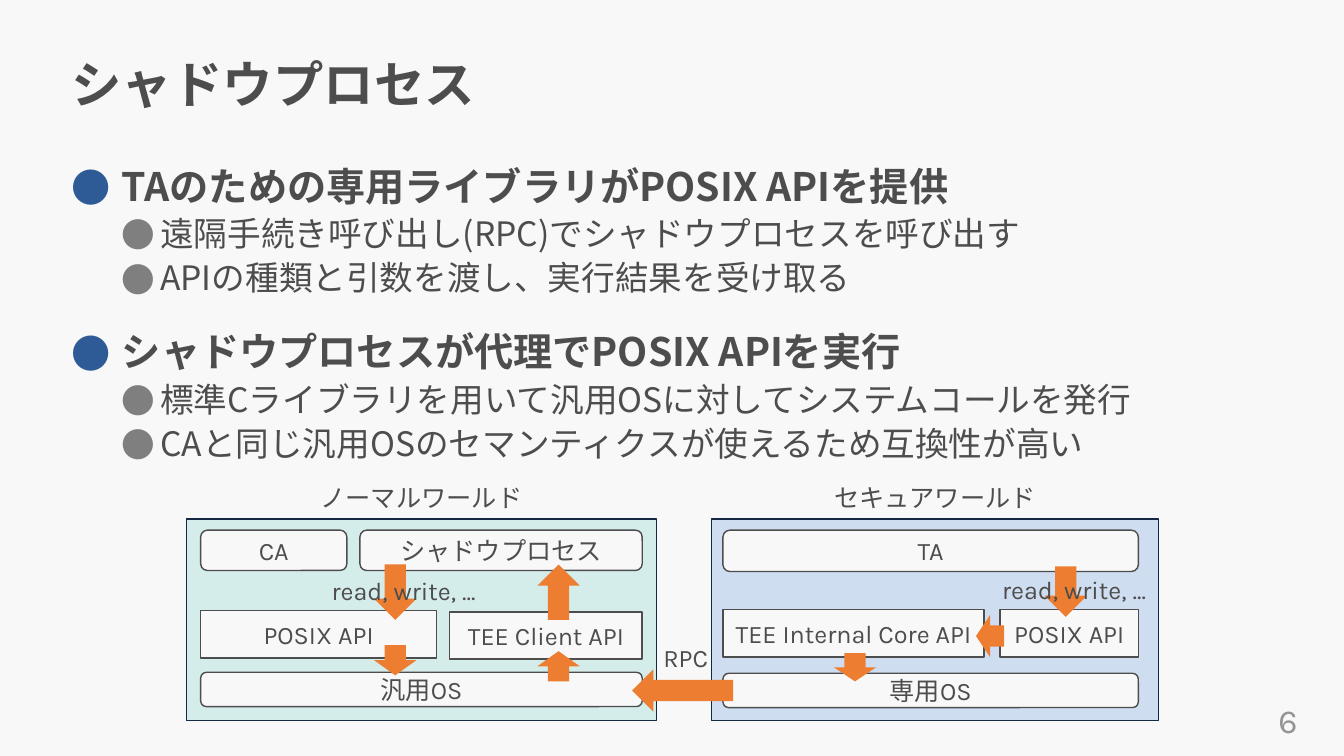
import pptx
import pptx.util
import pptx.dml.color
import pptx.enum.shapes
import pptx.enum.text
import pptx.oxml
import pptx.oxml.ns

PX = 9144
KIND = pptx.enum.shapes.MSO_SHAPE
ALIGN = pptx.enum.text.PP_ALIGN
ANCHOR = pptx.enum.text.MSO_ANCHOR
FIT = pptx.enum.text.MSO_AUTO_SIZE
SANS, KARLA = "Noto Sans CJK JP", "Karla"
HEX = {
    "back": "F8F8F8", "text": "4D4D4D", "page": "949494", "edge": "142842",
    "green": "D5EDEA", "blue": "CFDDF0", "arrow": "ED7D31",
    "main": "2E5B96", "sub": "7F7F7F",
}
POINTS = [
    (0, "TAのための専用ライブラリがPOSIX APIを提供"),
    (1, "遠隔手続き呼び出し(RPC)でシャドウプロセスを呼び出す"),
    (1, "APIの種類と引数を渡し、実行結果を受け取る"),
    (0, "シャドウプロセスが代理でPOSIX APIを実行"),
    (1, "標準Cライブラリを用いて汎用OSに対してシステムコールを発行"),
    (1, "CAと同じ汎用OSのセマンティクスが使えるため互換性が高い"),
]
NORMAL = {
    "name": "ノーマルワールド", "fill": "green",
    "round": [("CA", (14, 11, 145, 40)), ("シャドウプロセス", (172, 11, 280, 40)),
              ("汎用OS", (14, 152, 438, 34))],
    "rect": [("POSIX API", (14, 91, 234, 47)), ("TEE Client API", (261, 92, 191, 47))],
    "arrows": [((348, 131, 42, 30), 180), ((348, 45, 42, 55), 180),
               ((186, 45, 42, 55), 0), ((186, 125, 42, 30), 0)],
    "call": (134, 51, 165, 40),
}
SECURE = {
    "name": "セキュアワールド", "fill": "blue",
    "round": [("TA", (11, 11, 412, 41)), ("専用OS", (11, 153, 412, 34))],
    "rect": [("TEE Internal Core API", (11, 90, 259, 47)), ("POSIX API", (286, 90, 137, 47))],
    "arrows": [((330, 47, 42, 50), 0), ((121, 133, 42, 28), 0), ((255, 102, 42, 28), 90)],
    "call": (278, 50, 165, 40),
}


def color(key):
    """Return the named colour."""
    return pptx.dml.color.RGBColor.from_string(HEX[key])


def scale(box):
    """Turn a box of px into EMU."""
    return [n * PX for n in box]


def shift(box, part):
    """Place a part relative to the corner of a box."""
    return (box[0] + part[0], box[1] + part[1], part[2], part[3])


def node(parent, tag, **attrs):
    """Append a drawing element with attributes."""
    child = pptx.oxml.parse_xml(f"<a:{tag} {pptx.oxml.ns.nsdecls('a')}/>")
    for key, value in attrs.items():
        child.set(key, value)
    parent.append(child)
    return child


def write(para, text, size=18, face=KARLA, key="text", bold=False):
    """Add one formatted run."""
    run = para.add_run()
    run.text = text
    run.font.size = pptx.util.Pt(size)
    run.font.bold = bold
    run.font.color.rgb = color(key)
    run.font.name = face
    node(run.font._element, "ea", typeface=SANS)


def label(slide, box, text, wrap=False, size=18, key="text"):
    """Add a text box, centred if it wraps."""
    frame = slide.shapes.add_textbox(*scale(box)).text_frame
    frame.word_wrap = wrap
    frame.auto_size = FIT.SHAPE_TO_FIT_TEXT
    para = frame.paragraphs[0]
    para.alignment = ALIGN.CENTER if wrap else ALIGN.LEFT
    write(para, text, size, key=key)


def block(slide, box, kind, fill, edge=None, text=None):
    """Add a filled shape with optional edge and text."""
    shape = slide.shapes.add_shape(kind, *scale(box))
    shape.shadow.inherit = False
    shape.fill.solid()
    shape.fill.fore_color.rgb = color(fill)
    if edge:
        shape.line.color.rgb = color(edge)
        shape.line.width = pptx.util.Pt(1)
    else:
        shape.line.fill.background()
    if text:
        frame = shape.text_frame
        frame.margin_left = frame.margin_right = 0
        frame.vertical_anchor = ANCHOR.MIDDLE
        frame.paragraphs[0].alignment = ALIGN.CENTER
        write(frame.paragraphs[0], text)
    return shape


def arrow(slide, box, turn):
    """Add a down arrow turned clockwise."""
    block(slide, box, KIND.DOWN_ARROW, "arrow").rotation = turn


def settle(holder, box, anchor):
    """Move a placeholder and return its text frame."""
    holder.left, holder.top, holder.width, holder.height = scale(box)
    frame = holder.text_frame
    frame.auto_size = FIT.NONE
    frame.word_wrap = True
    frame.vertical_anchor = anchor
    return frame


def head(slide, box, text):
    """Fill the title."""
    para = settle(slide.shapes.title, box, ANCHOR.MIDDLE).paragraphs[0]
    para.alignment = ALIGN.LEFT
    para.line_spacing = 0.9
    write(para, text, 36, SANS, bold=True)


def body(slide, box, points):
    """Fill the bullet list."""
    frame = settle(slide.placeholders[1], box, ANCHOR.TOP)
    for i, (level, text) in enumerate(points):
        para = frame.add_paragraph() if i else frame.paragraphs[0]
        para.level = level
        para.line_spacing = 1.1
        para.space_before = pptx.util.Pt(0 if level else 18)
        left, hang, size, key = [(50, 50, 28, "main"), (88, 38, 24, "sub")][level]
        props = para._p.get_or_add_pPr()
        props.set("marL", str(left * PX))
        props.set("indent", str(-hang * PX))
        node(node(props, "buClr"), "srgbClr", val=HEX[key])
        node(props, "buFont", typeface=SANS)
        node(props, "buChar", char="●")
        write(para, text, size, SANS, bold=level == 0)


def world(slide, box, data):
    """Draw one world with its layers and arrows."""
    block(slide, box, KIND.RECTANGLE, data["fill"], "edge")
    label(slide, shift(box, (0, -41, box[2], 40)), data["name"], wrap=True)
    for group, kind in (("round", KIND.ROUNDED_RECTANGLE), ("rect", KIND.RECTANGLE)):
        for text, part in data[group]:
            block(slide, shift(box, part), kind, "back", "text", text)
    for part, turn in data["arrows"]:
        arrow(slide, shift(box, part), turn)
    label(slide, shift(box, data["call"]), "read, write, ...")


def link(slide, box):
    """Draw the call between the worlds."""
    arrow(slide, shift(box, (8, 3, 42, 100)), 90)
    label(slide, box, "RPC")


def main():
    """Build and save the deck."""
    deck = pptx.Presentation()
    deck.slide_width, deck.slide_height = scale((1333, 750))
    slide = deck.slides.add_slide(deck.slide_layouts[1])
    slide.background.fill.solid()
    slide.background.fill.fore_color.rgb = color("back")
    head(slide, (61, 35, 1214, 103), "シャドウプロセス")
    body(slide, (61, 151, 1214, 570), POINTS)
    world(slide, (185, 515, 466, 200), NORMAL)
    world(slide, (706, 515, 443, 200), SECURE)
    link(slide, (648, 632, 65, 40))
    label(slide, (1258, 689, 61, 50), "6", size=24, key="page")
    deck.save("out.pptx")


if __name__ == "__main__":
    main()
